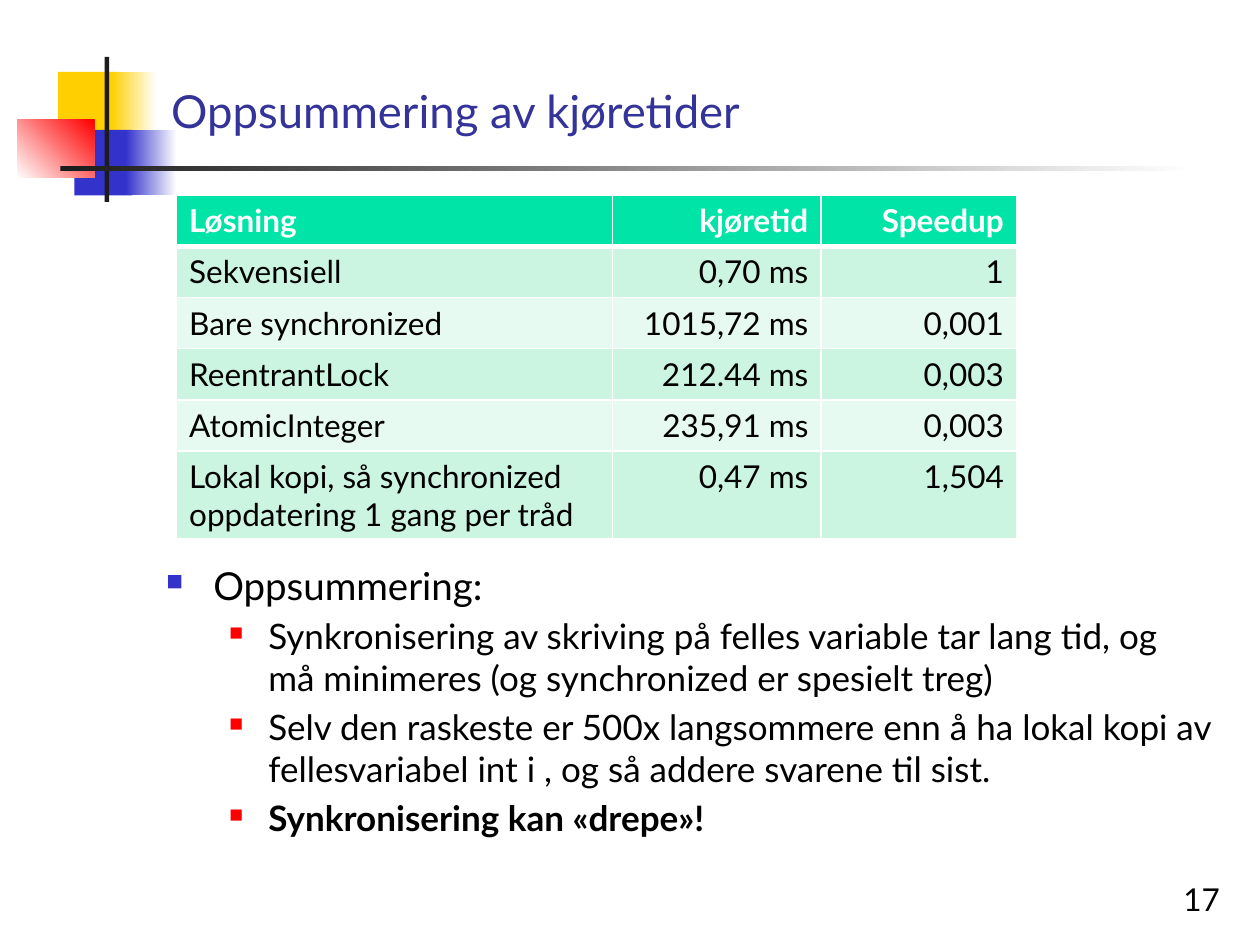
from lxml import etree
from pptx import Presentation
from pptx import util as u
from pptx.dml import color
from pptx.enum import shapes, text
from pptx.oxml import ns

FONT = "Lato"
BLACK, WHITE, DARK = "000000", "FFFFFF", "1C1C1C"
YELLOW, BLUE, RED, TITLE_BLUE = "FFCF01", "3333CC", "FF0000", "333399"
HEADER, BAND_DARK, BAND_LIGHT = "00E4A8", "CCF5E1", "E7FAF1"
LEFT, RIGHT = text.PP_ALIGN.LEFT, text.PP_ALIGN.RIGHT
TOP, BOTTOM = text.MSO_ANCHOR.TOP, text.MSO_ANCHOR.BOTTOM

# left, top, width, height in cm, then colours and gradient angle
ORNAMENTS = [
    (1.17, 1.45, 1.22, 1.32, [YELLOW], 0),
    (2.24, 1.45, 0.91, 1.32, [YELLOW, WHITE], 0),
    (1.5, 2.62, 1.17, 1.32, [BLUE], 0),
    (2.54, 2.62, 1.02, 1.32, [BLUE, WHITE], 0),
    (0.35, 2.42, 1.55, 1.17, [WHITE, RED], 45),
    (2.11, 1.15, 0.09, 2.92, [DARK], 0),
    (1.22, 3.35, 22.86, 0.09, [DARK, WHITE], 0),
]

RUNTIMES = [
    ("Løsning", "kjøretid", "Speedup"),
    ("Sekvensiell", "0,70 ms", "1"),
    ("Bare synchronized", "1015,72 ms", "0,001"),
    ("ReentrantLock", "212.44 ms", "0,003"),
    ("AtomicInteger", "235,91 ms", "0,003"),
    ("Lokal kopi, så synchronized oppdatering 1 gang per tråd", "0,47 ms", "1,504"),
]

CONCLUSIONS = [
    ("Synkronisering av skriving på felles variable tar lang tid, og må minimeres "
     "(og synchronized er spesielt treg)", False),
    ("Selv den raskeste er 500x langsommere enn å ha lokal kopi av fellesvariabel "
     "int i , og så addere svarene til sist.", False),
    ("Synkronisering kan «drepe»!", True),
]


def rgb(value):
    return color.RGBColor.from_string(value)


def add_xml(parent, tag, **attributes):
    return etree.SubElement(parent, ns.qn(tag), attributes)


def write(para, words, size=18, colour=BLACK, bold=False, align=LEFT):
    para.alignment = align
    span = para.add_run()
    span.text = words
    span.font.name = FONT
    span.font.size = u.Pt(size)
    span.font.bold = bold
    span.font.color.rgb = rgb(colour)


def add_bullet(para, colour, percent, margin, hanging):
    """Give a paragraph a square bullet; margin and hanging are in cm."""
    properties = para._p.get_or_add_pPr()
    properties.set("marL", str(u.Cm(margin)))
    properties.set("indent", str(-u.Cm(hanging)))
    add_xml(add_xml(properties, "a:buClr"), "a:srgbClr", val=colour)
    add_xml(properties, "a:buSzPct", val=str(percent * 1000))
    add_xml(properties, "a:buChar", char="■")


def add_borders(cell, bottom_width):
    properties = cell._tc.get_or_add_tcPr()
    for side, width in (("L", 1), ("R", 1), ("T", 1), ("B", bottom_width)):
        line = add_xml(properties, f"a:ln{side}", w=str(u.Pt(width)))
        add_xml(add_xml(line, "a:solidFill"), "a:srgbClr", val=WHITE)


class Page:
    """The current slide and the elements it is made of; lengths are in cm."""

    def __init__(self, deck):
        self.shapes = deck.slides.add_slide(deck.slide_layouts[6]).shapes

    def rectangle(self, left, top, width, height, colours, angle):
        shape = self.shapes.add_shape(
            shapes.MSO_SHAPE.RECTANGLE, *map(u.Cm, (left, top, width, height)))
        shape.shadow.inherit = False
        shape.line.fill.background()
        if len(colours) == 1:
            shape.fill.solid()
            shape.fill.fore_color.rgb = rgb(colours[0])
        else:
            shape.fill.gradient()
            shape.fill.gradient_angle = angle
            for stop, colour in zip(shape.fill.gradient_stops, colours):
                stop.color.rgb = rgb(colour)

    def text_box(self, left, top, width, height, anchor=TOP):
        frame = self.shapes.add_textbox(
            *map(u.Cm, (left, top, width, height))).text_frame
        frame.word_wrap = True
        frame.vertical_anchor = anchor
        return frame

    def table(self, left, top, widths, heights, rows):
        table = self.shapes.add_table(
            len(rows), len(widths), u.Cm(left), u.Cm(top),
            u.Cm(sum(widths)), u.Cm(sum(heights))).table
        for column, width in zip(table.columns, widths):
            column.width = u.Cm(width)
        for i, (row, height) in enumerate(zip(rows, heights)):
            table.rows[i].height = u.Cm(height)
            header = i == 0
            fill = HEADER if header else BAND_DARK if i % 2 else BAND_LIGHT
            for j, words in enumerate(row):
                cell = table.cell(i, j)
                add_borders(cell, 3 if header else 1)
                cell.fill.solid()
                cell.fill.fore_color.rgb = rgb(fill)
                write(cell.text_frame.paragraphs[0], words, bold=header,
                      colour=WHITE if header else BLACK, align=RIGHT if j else LEFT)


def main():
    deck = Presentation()
    deck.slide_width, deck.slide_height = u.Cm(25.4), u.Cm(19.05)
    page = Page(deck)
    for ornament in ORNAMENTS:
        page.rectangle(*ornament)

    title = page.text_box(3.2, 0.58, 21.64, 2.31, BOTTOM)
    write(title.paragraphs[0], "Oppsummering av kjøretider", size=26, colour=TITLE_BLUE)

    body = page.text_box(3.1, 11.2, 21.59, 6.94)
    add_bullet(body.paragraphs[0], BLUE, 60, 0.95, 0.95)
    write(body.paragraphs[0], "Oppsummering:", size=22)
    for words, bold in CONCLUSIONS:
        para = body.add_paragraph()
        para.level = 1
        para.space_before = u.Pt(4)
        add_bullet(para, RED, 55, 2.06, 0.79)
        write(para, words, size=20, bold=bold)

    number = page.text_box(19.56, 17.35, 5.28, 1.27, BOTTOM)
    write(number.paragraphs[0], "17", align=RIGHT)

    page.table(3.56, 3.94, [8.79, 4.2, 3.94], [1.03] * 5 + [1.78], RUNTIMES)
    deck.save("out.pptx")


if __name__ == "__main__":
    main()
